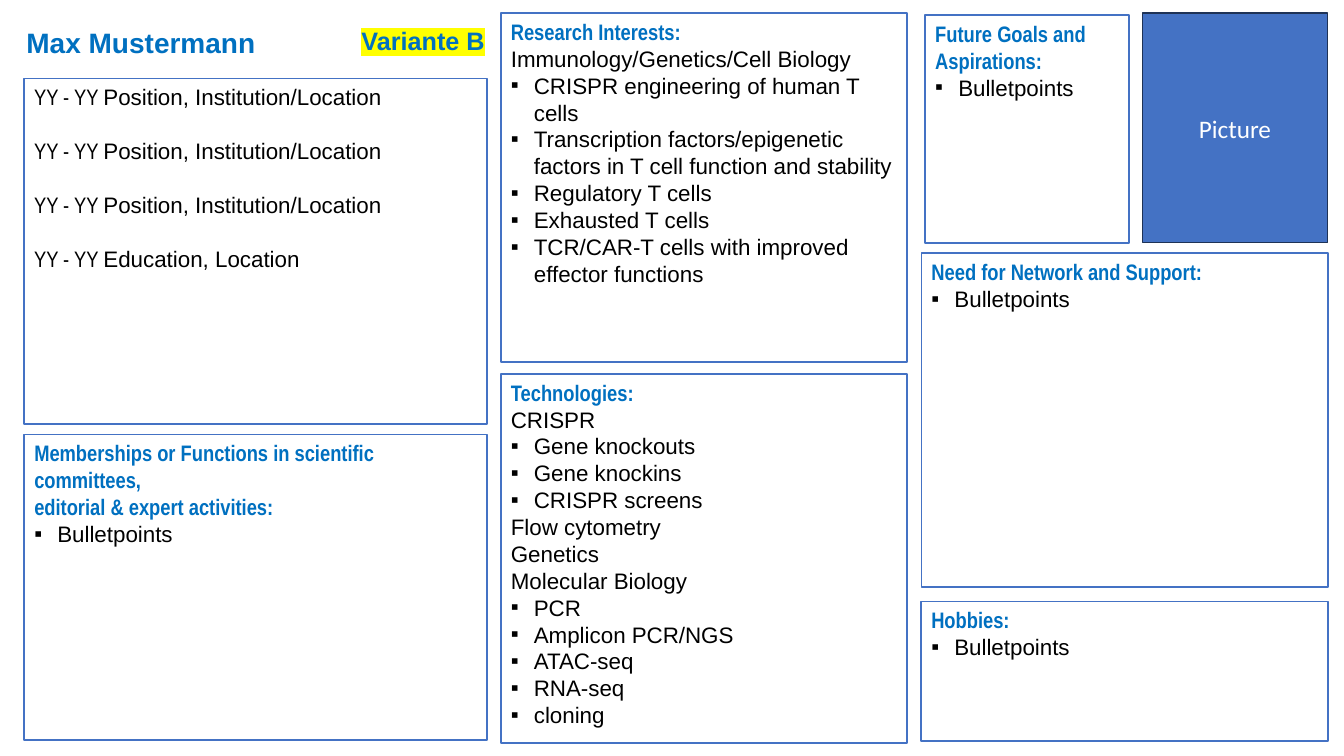
from lxml import etree
from pptx import Presentation
from pptx import util as u
from pptx.dml.color import RGBColor
from pptx.enum import shapes, text
from pptx.oxml.ns import qn

BLUE = RGBColor(0x00, 0x70, 0xC0)
BORDER = RGBColor(0x44, 0x72, 0xC4)
DARK_BORDER = RGBColor(0x1E, 0x32, 0x56)
BLACK = RGBColor(0, 0, 0)
WHITE = RGBColor(255, 255, 255)
YELLOW = RGBColor(255, 255, 0)

LEFT, MIDDLE, RIGHT = 0.61, 12.62, 23.22
WIDE, NARROW = 11.66, 10.24

PANELS = [
    ((MIDDLE, 0.33, NARROW, 8.79), "Research Interests:", [
        "Immunology/Genetics/Cell Biology",
        "▪CRISPR engineering of human T cells",
        "▪Transcription factors/epigenetic factors in T cell function and stability",
        "▪Regulatory T cells",
        "▪Exhausted T cells",
        "▪TCR/CAR-T cells with improved effector functions"]),
    ((MIDDLE, 9.42, NARROW, 9.3), "Technologies:", [
        "CRISPR", "▪Gene knockouts", "▪Gene knockins", "▪CRISPR screens",
        "Flow cytometry", "Genetics", "Molecular Biology",
        "▪PCR", "▪Amplicon PCR/NGS", "▪ATAC-seq", "▪RNA-seq", "▪cloning"]),
    ((LEFT, 10.95, WIDE, 7.7),
     "Memberships or Functions in scientific committees,\neditorial & expert activities:",
     ["▪Bulletpoints"]),
    ((RIGHT, 6.38, NARROW, 8.41), "Need for Network and Support:", ["▪Bulletpoints"]),
    ((23.32, 0.38, 5.13, 5.74), "Future Goals and Aspirations:", ["▪Bulletpoints"]),
    ((RIGHT, 15.16, NARROW, 3.51), "Hobbies:", ["▪Bulletpoints"]),
]
CAREER = ["Position, Institution/Location"] * 3 + ["Education, Location"]


def write(paragraph, content, font="Arial", size=16, color=BLACK, bold=False, highlight=None):
    for index, line in enumerate(content.split("\n")):
        if index:
            paragraph.add_line_break()
        run = paragraph.add_run()
        run.text = line
        run.font.name = font
        run.font.size = u.Pt(size)
        run.font.bold = bold
        run.font.color.rgb = color
        if highlight:
            mark = etree.Element(qn("a:highlight"))
            etree.SubElement(mark, qn("a:srgbClr")).set("val", str(highlight))
            run._r.get_or_add_rPr().find(qn("a:latin")).addprevious(mark)


def set_paragraph(paragraph, bullet=False, gap=0, align=text.PP_ALIGN.LEFT):
    paragraph.alignment = align
    paragraph.space_before = u.Pt(0)
    paragraph.space_after = u.Pt(gap)
    properties = paragraph._p.get_or_add_pPr()
    indent = u.Cm(0.58) if bullet else 0
    properties.set("marL", str(indent))
    properties.set("indent", str(-indent))
    if bullet:
        etree.SubElement(properties, qn("a:buFont")).set("typeface", "Arial")
        etree.SubElement(properties, qn("a:buChar")).set("char", "▪")
    else:
        etree.SubElement(properties, qn("a:buNone"))


def place(shape, box):
    shape.left, shape.top, shape.width, shape.height = (u.Cm(value) for value in box)


def prepare_frame(shape, anchor=text.MSO_ANCHOR.TOP):
    frame = shape.text_frame
    frame.word_wrap = True
    frame.auto_size = text.MSO_AUTO_SIZE.NONE
    frame.vertical_anchor = anchor
    return frame


def add_box(slide):
    shape = slide.shapes.add_shape(shapes.MSO_SHAPE.RECTANGLE, 0, 0, 0, 0)
    shape.shadow.inherit = False
    return shape


def frame_panel(shape, box):
    place(shape, box)
    shape.fill.background()
    shape.line.color.rgb = BORDER
    shape.line.width = u.Pt(1.25)
    return prepare_frame(shape)


def fill_panel(shape, box, heading, lines):
    frame = frame_panel(shape, box)
    set_paragraph(frame.paragraphs[0])
    write(frame.paragraphs[0], heading, font="Arial Narrow", color=BLUE, bold=True)
    for line in lines:
        paragraph = frame.add_paragraph()
        set_paragraph(paragraph, bullet=line.startswith("▪"))
        write(paragraph, line.lstrip("▪"))


def fill_career(shape, box):
    frame = frame_panel(shape, box)
    for index, entry in enumerate(CAREER):
        paragraph = frame.add_paragraph() if index else frame.paragraphs[0]
        set_paragraph(paragraph, gap=19.2)
        write(paragraph, "YY - YY ", font="Arial Narrow")
        write(paragraph, entry)


def fill_title(title):
    place(title, (0.41, -0.61, 29.21, 2.24))
    paragraph = prepare_frame(title, text.MSO_ANCHOR.BOTTOM).paragraphs[0]
    set_paragraph(paragraph)
    paragraph.line_spacing = 0.9
    write(paragraph, "Max Mustermann", size=20, color=BLUE, bold=True)


def add_variant(slide):
    label = slide.shapes.add_textbox(0, 0, 0, 0)
    place(label, (8.86, 0.51, 18.42, 1.02))
    paragraph = prepare_frame(label).paragraphs[0]
    write(paragraph, "Variante B", size=18, color=BLUE, bold=True, highlight=YELLOW)


def add_portrait(slide):
    portrait = add_box(slide)
    place(portrait, (28.8, 0.33, 4.65, 5.79))
    portrait.fill.solid()
    portrait.fill.fore_color.rgb = BORDER
    portrait.line.color.rgb = DARK_BORDER
    portrait.line.width = u.Pt(1)
    paragraph = prepare_frame(portrait, text.MSO_ANCHOR.MIDDLE).paragraphs[0]
    set_paragraph(paragraph, align=text.PP_ALIGN.CENTER)
    write(paragraph, "Picture", font="Calibri", size=18, color=WHITE)


def main():
    presentation = Presentation()
    presentation.slide_width = u.Cm(33.87)
    presentation.slide_height = u.Cm(19.05)
    comparison = presentation.slide_layouts.get_by_name("Comparison")
    slide = presentation.slides.add_slide(comparison)

    bodies = [holder for holder in slide.placeholders if holder.placeholder_format.idx > 0]
    fill_title(slide.shapes.title)
    for index, (box, heading, lines) in enumerate(PANELS):
        shape = bodies[index] if index < len(bodies) else add_box(slide)
        fill_panel(shape, box, heading, lines)
    fill_career(add_box(slide), (LEFT, 1.98, WIDE, 8.71))
    add_portrait(slide)
    add_variant(slide)
    presentation.save("out.pptx")


if __name__ == "__main__":
    main()
